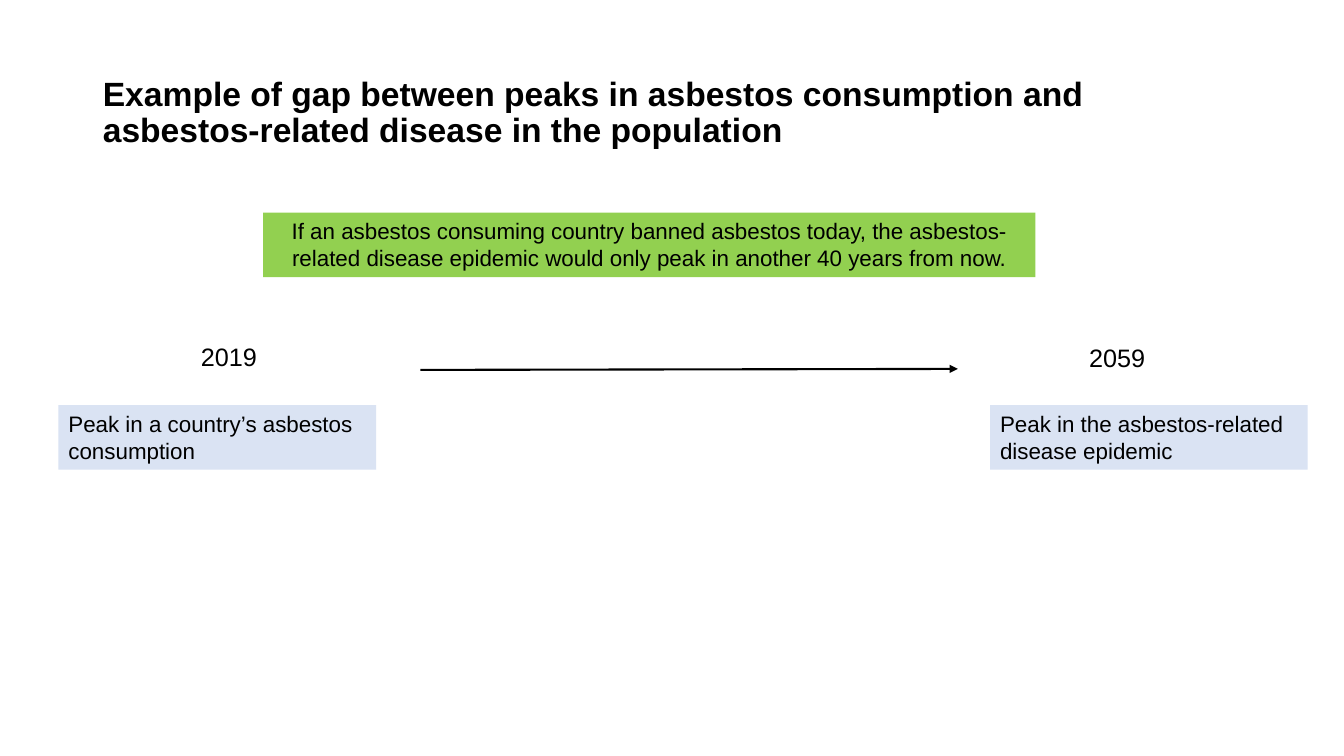
from dataclasses import dataclass

from lxml.etree import SubElement
from pptx import Presentation
from pptx.dml.color import RGBColor
from pptx.enum.shapes import MSO_CONNECTOR
from pptx.enum.text import MSO_ANCHOR, MSO_AUTO_SIZE, PP_ALIGN
from pptx.oxml.ns import qn
from pptx.util import Emu, Pt


@dataclass(frozen=True)
class Theme:
    font: str = "Arial"
    ink: str = "000000"
    message: str = "92D050"
    event: str = "DAE3F3"
    title_size: int = 24
    year_size: int = 18
    body_size: int = 16
    line_width: float = 1.5


THEME = Theme()
EMU_PER_PX = 9144  # 100 px to the inch


def px(n):
    return Emu(n * EMU_PER_PX)


def color(value):
    return RGBColor.from_string(value)


def add_run(p, text, size, bold=False):
    r = p.add_run()
    r.text = text
    r.font.name = THEME.font
    r.font.size = Pt(size)
    r.font.bold = bold
    r.font.color.rgb = color(THEME.ink)


def set_title(slide, text, left, top, width, height):
    sp = slide.shapes.title
    sp.left, sp.top, sp.width, sp.height = map(px, (left, top, width, height))
    tf = sp.text_frame
    tf.word_wrap = True
    tf.vertical_anchor = MSO_ANCHOR.MIDDLE
    p = tf.paragraphs[0]
    p.alignment = PP_ALIGN.LEFT
    p.line_spacing = 0.9
    add_run(p, text, THEME.title_size, bold=True)


def add_label(slide, text, box, size, align=PP_ALIGN.LEFT, fill=None):
    sp = slide.shapes.add_textbox(*map(px, box))
    if fill:
        sp.fill.solid()
        sp.fill.fore_color.rgb = color(fill)
    tf = sp.text_frame
    tf.word_wrap = True
    tf.auto_size = MSO_AUTO_SIZE.SHAPE_TO_FIT_TEXT
    p = tf.paragraphs[0]
    p.alignment = align
    add_run(p, text, size)


def add_arrow(slide, x1, y1, x2, y2):
    cxn = slide.shapes.add_connector(
        MSO_CONNECTOR.STRAIGHT, px(x1), px(y1), px(x2), px(y2))
    cxn.line.color.rgb = color(THEME.ink)
    cxn.line.width = Pt(THEME.line_width)
    SubElement(cxn.line._get_or_add_ln(), qn("a:tailEnd"), type="triangle")
    SubElement(cxn._element.spPr, qn("a:effectLst"))


def main():
    prs = Presentation()
    prs.slide_width, prs.slide_height = px(1333), px(750)
    slide = prs.slides.add_slide(prs.slide_layouts[5])

    set_title(slide, "Example of gap between peaks in asbestos consumption and "
              "asbestos-related disease in the population", 92, 40, 1150, 145)

    # Key message
    add_label(slide, "If an asbestos consuming country banned asbestos today, "
              "the asbestos-related disease epidemic would only peak in "
              "another 40 years from now.",
              (261, 211, 766, 64), THEME.body_size, PP_ALIGN.CENTER,
              THEME.message)

    # Timeline: a year above each peak, joined by an arrow
    peaks = [
        ("2019", 157, 334, "Peak in a country’s asbestos consumption", 58),
        ("2059", 1038, 335, "Peak in the asbestos-related disease epidemic", 982),
    ]
    for year, year_left, year_top, event, event_left in peaks:
        add_label(slide, year, (year_left, year_top, 140, 40),
                  THEME.year_size, PP_ALIGN.CENTER)
        add_label(slide, event, (event_left, 402, 315, 64),
                  THEME.body_size, fill=THEME.event)
    add_arrow(slide, 417, 367, 950, 366)

    prs.save("out.pptx")


if __name__ == "__main__":
    main()
